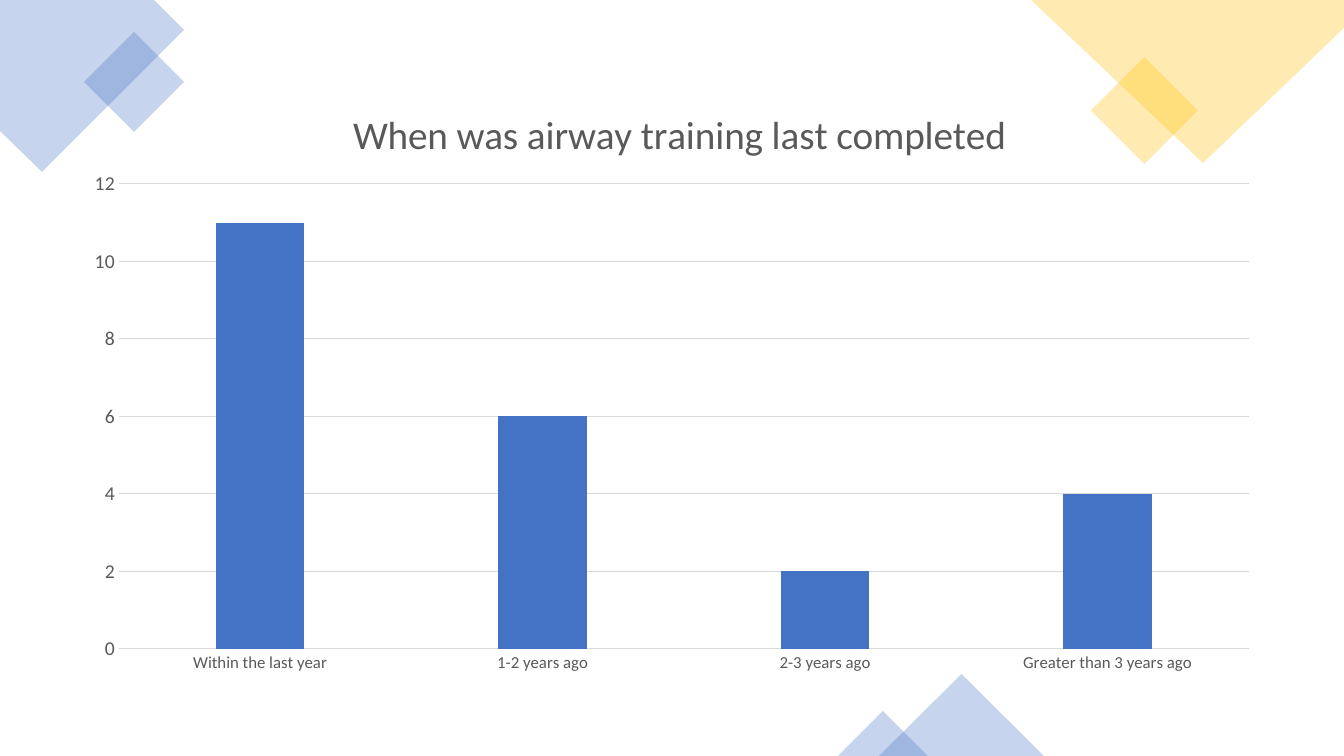
from dataclasses import dataclass

from lxml.etree import SubElement
from pptx import Presentation
from pptx.chart.data import CategoryChartData
from pptx.dml.color import RGBColor
from pptx.enum.chart import XL_CHART_TYPE, XL_TICK_MARK
from pptx.enum.shapes import MSO_SHAPE
from pptx.oxml import parse_xml
from pptx.oxml.ns import nsdecls, qn
from pptx.util import Pt

TITLE = "When was airway training last completed"
RESPONSES = {
    "Within the last year": 11,
    "1-2 years ago": 6,
    "2-3 years ago": 2,
    "Greater than 3 years ago": 4,
}


@dataclass(frozen=True)
class Theme:
    font: str = "Calibri"
    blue: str = "4472C4"
    yellow: str = "FFC000"
    text: str = "595959"
    grid: str = "D9D9D9"
    title_size: int = 28
    value_size: int = 14
    category_size: int = 12
    line_width: float = 0.75
    opacity: int = 30


THEME = Theme()
PX = 914400 / 100.8
SLIDE_SIZE = (1344, 756)
CHART_BOX = (71, 71, 1202, 614)
PLOT_BOX = (119, 184, 1130, 465)
TITLE_CORNER = (346, 101)

OUTLINES = [
    ([(0, 0), (154, 0), (184, 30), (42, 172), (0, 131)], THEME.blue),
    ([(1031, 0), (1344, 0), (1344, 28), (1203, 163)], THEME.yellow),
]
PRESETS = [
    (MSO_SHAPE.DIAMOND, (84, 32, 100, 100), THEME.blue),
    (MSO_SHAPE.DIAMOND, (1091, 57, 107, 107), THEME.yellow),
    (MSO_SHAPE.ISOSCELES_TRIANGLE, (879, 674, 165, 82), THEME.blue),
    (MSO_SHAPE.ISOSCELES_TRIANGLE, (838, 711, 90, 45), THEME.blue),
]


def emu(*lengths):
    return [round(length * PX) for length in lengths]


def format_font(font, size, color=THEME.text, bold=False):
    font.name = THEME.font
    font.size = Pt(size)
    font.bold = bold
    font.color.rgb = RGBColor.from_string(color)


def write_text(text_frame, text, **text_format):
    text_frame.text = text
    format_font(text_frame.paragraphs[0].runs[0].font, **text_format)


def paint(shape, color):
    shape.shadow.inherit = False
    shape.line.fill.background()
    shape.fill.solid()
    shape.fill.fore_color.rgb = RGBColor.from_string(color)
    color_element = shape.fill._xPr.find(".//" + qn("a:srgbClr"))
    SubElement(color_element, qn("a:alpha"), val=str(THEME.opacity * 1000))


def add_decorations(slide):
    for points, color in OUTLINES:
        builder = slide.shapes.build_freeform(*points[0], scale=PX)
        builder.add_line_segments(points[1:], close=True)
        paint(builder.convert_to_shape(), color)
    for preset, box, color in PRESETS:
        paint(slide.shapes.add_shape(preset, *emu(*box)), color)


def set_layout(parent, index, left, top, size=None):
    for layout in parent.findall(qn("c:layout")):
        parent.remove(layout)
    chart_left, chart_top, chart_width, chart_height = CHART_BOX
    values = {
        "x": (left - chart_left) / chart_width,
        "y": (top - chart_top) / chart_height,
    }
    target = ""
    if size:
        target = '<c:layoutTarget val="inner"/>'
        values |= {"w": size[0] / chart_width, "h": size[1] / chart_height}
    modes = '<c:xMode val="edge"/><c:yMode val="edge"/>'
    fractions = "".join(f'<c:{key} val="{value:.4f}"/>' for key, value in values.items())
    parent.insert(index, parse_xml(
        f'<c:layout {nsdecls("c")}><c:manualLayout>{target}{modes}{fractions}'
        "</c:manualLayout></c:layout>"
    ))


def format_line(line):
    line.color.rgb = RGBColor.from_string(THEME.grid)
    line.width = Pt(THEME.line_width)


def add_response_chart(slide):
    data = CategoryChartData()
    data.categories = list(RESPONSES)
    data.add_series("Series 1", list(RESPONSES.values()))
    chart = slide.shapes.add_chart(
        XL_CHART_TYPE.COLUMN_CLUSTERED, *emu(*CHART_BOX), data
    ).chart
    chart.has_legend = False
    format_font(chart.font, THEME.category_size)

    write_text(chart.chart_title.text_frame, TITLE, size=THEME.title_size)
    set_layout(chart.chart_title._element, 1, *TITLE_CORNER)
    plot_area = chart._chartSpace.find(".//" + qn("c:plotArea"))
    set_layout(plot_area, 0, *PLOT_BOX[:2], size=PLOT_BOX[2:])

    plot = chart.plots[0]
    plot.gap_width = 219
    plot.overlap = -27
    plot.vary_by_categories = False
    fill = plot.series[0].format.fill
    fill.solid()
    fill.fore_color.rgb = RGBColor.from_string(THEME.blue)

    category_axis, value_axis = chart.category_axis, chart.value_axis
    for axis, size in (
        (category_axis, THEME.category_size),
        (value_axis, THEME.value_size),
    ):
        axis.major_tick_mark = XL_TICK_MARK.NONE
        axis.minor_tick_mark = XL_TICK_MARK.NONE
        format_font(axis.tick_labels.font, size)
    format_line(category_axis.format.line)
    value_axis.format.line.fill.background()
    value_axis.minimum_scale = 0
    value_axis.maximum_scale = 12
    value_axis.major_unit = 2
    format_line(value_axis.major_gridlines.format.line)


def main():
    presentation = Presentation()
    presentation.slide_width, presentation.slide_height = emu(*SLIDE_SIZE)
    slide = presentation.slides.add_slide(presentation.slide_layouts[6])
    add_decorations(slide)
    add_response_chart(slide)
    presentation.save("out.pptx")


if __name__ == "__main__":
    main()
